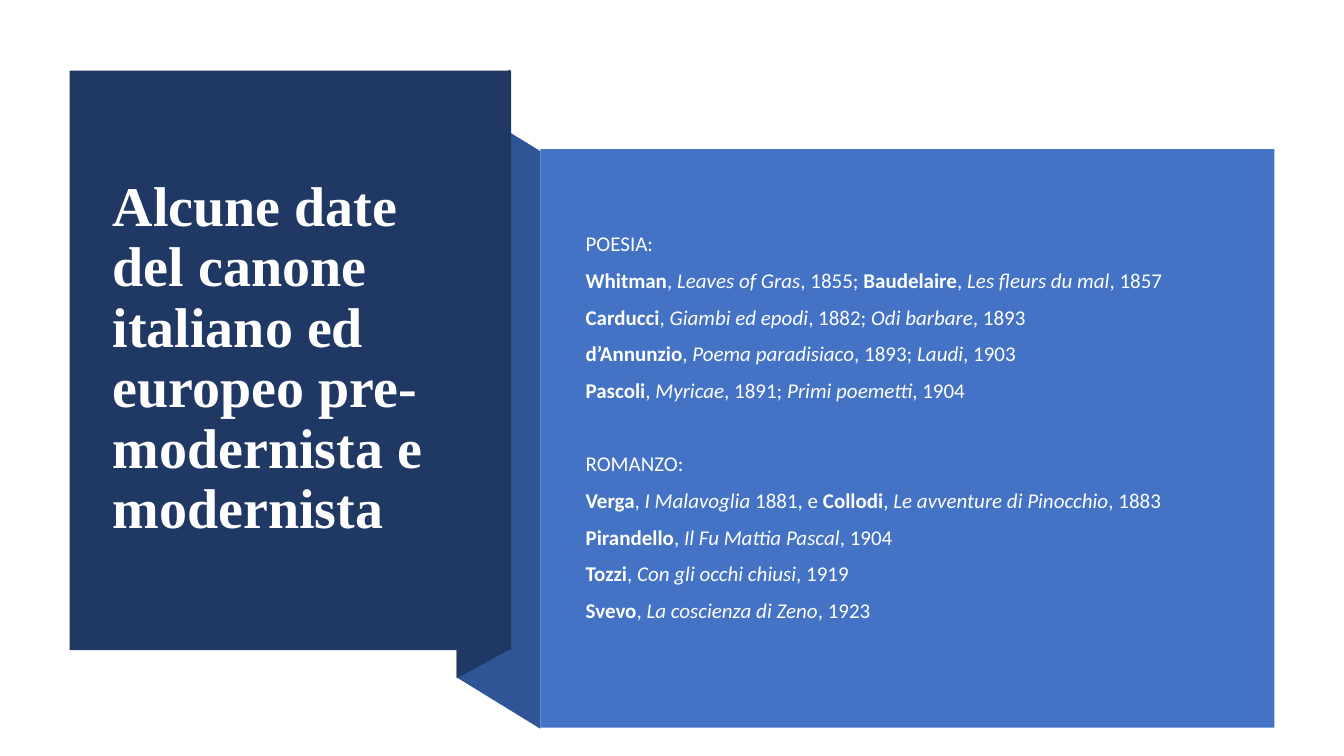
"""Build a slide listing key dates of the Italian and European literary canon."""
from pptx import Presentation
from pptx.dml.color import RGBColor
from pptx.enum.shapes import MSO_SHAPE
from pptx.enum.text import MSO_ANCHOR, PP_ALIGN
from pptx.util import Inches, Pt

TITLE = "Alcune date del canone italiano ed europeo pre-modernista e modernista"
PLAIN, BOLD, ITALIC = "plain", "bold", "italic"
SECTIONS = [
    [
        [("POESIA:", PLAIN)],
        [("Whitman", BOLD), (", ", PLAIN), ("Leaves of Gras", ITALIC), (", 1855; ", PLAIN),
         ("Baudelaire", BOLD), (", ", PLAIN), ("Les fleurs du mal", ITALIC), (", 1857", PLAIN)],
        [("Carducci", BOLD), (", ", PLAIN), ("Giambi ed epodi", ITALIC), (", 1882; ", PLAIN),
         ("Odi barbare", ITALIC), (", 1893", PLAIN)],
        [("d’Annunzio", BOLD), (", ", PLAIN), ("Poema paradisiaco", ITALIC), (", 1893; ", PLAIN),
         ("Laudi", ITALIC), (", 1903", PLAIN)],
        [("Pascoli", BOLD), (", ", PLAIN), ("Myricae", ITALIC), (", 1891; ", PLAIN),
         ("Primi poemetti", ITALIC), (", 1904", PLAIN)],
    ],
    [
        [("ROMANZO:", PLAIN)],
        [("Verga", BOLD), (", ", PLAIN), ("I Malavoglia", ITALIC), (" 1881, e ", PLAIN),
         ("Collodi", BOLD), (", ", PLAIN), ("Le avventure di Pinocchio", ITALIC), (", 1883", PLAIN)],
        [("Pirandello", BOLD), (", ", PLAIN), ("Il Fu Mattia Pascal", ITALIC), (", 1904", PLAIN)],
        [("Tozzi", BOLD), (", ", PLAIN), ("Con gli occhi chiusi", ITALIC), (", 1919", PLAIN)],
        [("Svevo", BOLD), (", ", PLAIN), ("La coscienza di Zeno", ITALIC), (", 1923", PLAIN)],
    ],
]
COLORS = {"navy": "203864", "fold": "2F5597", "panel": "4472C4",
          "title": "FFFFFF", "body": "FEFFFF"}

COLUMNS, ROWS = 1333, 750
CELL = Inches(0.01)
FOLDS = [
    ("fold", [(536, 723), (453, 672), (453, 99), (536, 150)]),
    ("navy", [(506, 644), (453, 673), (453, 98), (506, 69)]),
]
TITLE_PANEL = (69, 70, 438, 575)
BODY_PANEL = (536, 148, 728, 574)
TITLE_AREA = (102, 107, 371, 499)
BODY_AREA = (571, 188, 651, 474)
LINE_GAP, SECTION_GAP = Pt(10), Pt(36.2)


def place(area):
    return [CELL * cells for cells in area]


def paint(shape, color):
    shape.shadow.inherit = False
    shape.fill.solid()
    shape.fill.fore_color.rgb = RGBColor.from_string(COLORS[color])
    shape.line.fill.background()


def add_panel(slide, area, color):
    paint(slide.shapes.add_shape(MSO_SHAPE.RECTANGLE, *place(area)), color)


def add_frame(slide, area):
    frame = slide.shapes.add_textbox(*place(area)).text_frame
    frame.word_wrap = True
    frame.vertical_anchor = MSO_ANCHOR.MIDDLE
    return frame


def format_span(span, font, size, color, style):
    span.font.name = font
    span.font.size = Pt(size)
    span.font.color.rgb = RGBColor.from_string(COLORS[color])
    span.font.bold = style == BOLD
    span.font.italic = style == ITALIC


def add_title(slide):
    para = add_frame(slide, TITLE_AREA).paragraphs[0]
    para.text = TITLE
    para.alignment = PP_ALIGN.LEFT
    para.line_spacing = 0.9
    format_span(para.runs[0], "Times New Roman", 40, "title", BOLD)


def add_dates(slide):
    frame = add_frame(slide, BODY_AREA)
    for section_index, section in enumerate(SECTIONS):
        for line_index, line in enumerate(section):
            first = section_index == line_index == 0
            para = frame.paragraphs[0] if first else frame.add_paragraph()
            para.alignment = PP_ALIGN.LEFT
            para.line_spacing = 0.9
            new_section = section_index > 0 and line_index == 0
            para.space_before = SECTION_GAP if new_section else LINE_GAP
            for words, style in line:
                span = para.add_run()
                span.text = words
                format_span(span, "Calibri", 15, "body", style)


def main():
    deck = Presentation()
    deck.slide_width, deck.slide_height = CELL * COLUMNS, CELL * ROWS
    slide = deck.slides.add_slide(deck.slide_layouts[6])
    for color, corners in FOLDS:
        outline = slide.shapes.build_freeform(*corners[0], scale=CELL)
        outline.add_line_segments(corners[1:], close=True)
        paint(outline.convert_to_shape(), color)
    add_panel(slide, TITLE_PANEL, "navy")
    add_title(slide)
    add_panel(slide, BODY_PANEL, "panel")
    add_dates(slide)
    deck.save("out.pptx")


if __name__ == "__main__":
    main()
